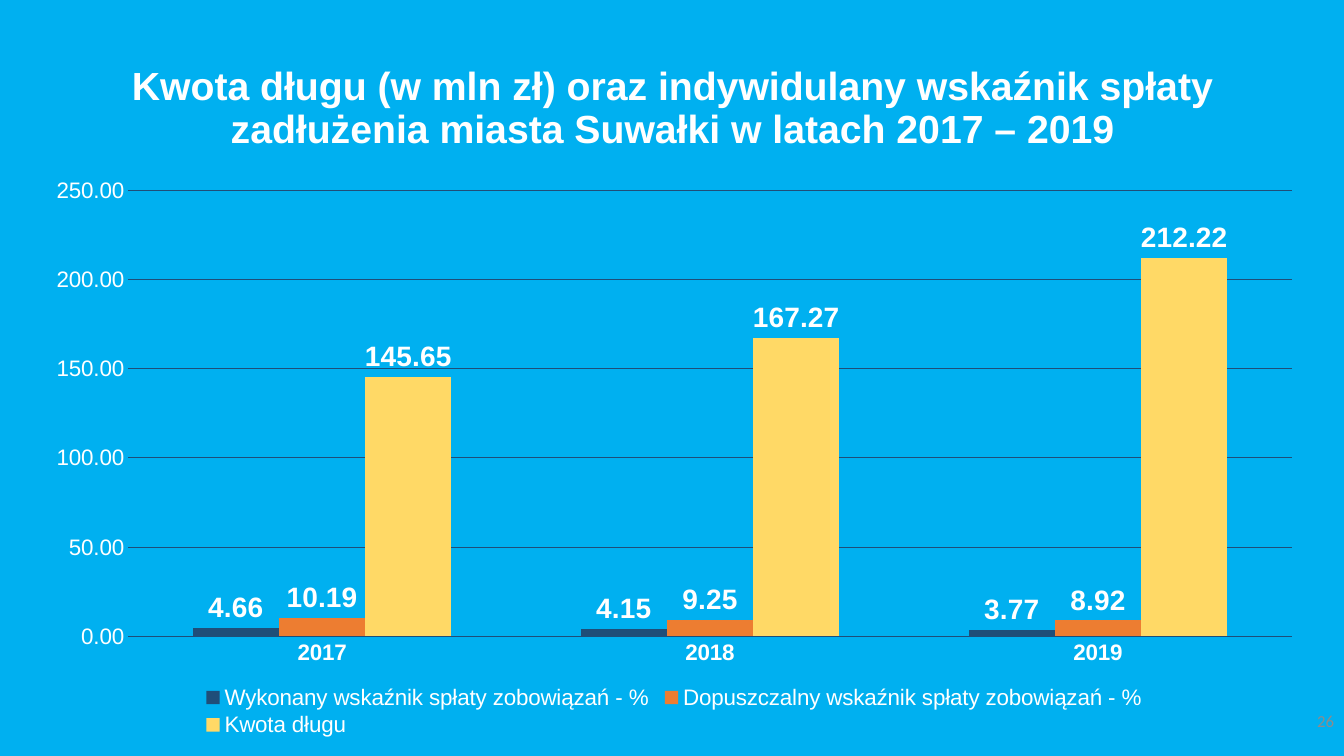
from lxml import etree
from pptx import Presentation
from pptx.chart.data import CategoryChartData
from pptx.dml.color import RGBColor
from pptx.enum import chart as ch, text
from pptx.oxml.ns import qn
from pptx.util import Inches, Pt

COLORS = {"sky": "00B0F0", "white": "FFFFFF", "navy": "1F4E79",
          "orange": "ED7D31", "yellow": "FFD966", "grey": "8C8C8C"}
YEARS = ["2017", "2018", "2019"]
SERIES = [
    ("Wykonany wskaźnik spłaty zobowiązań - %", [4.66, 4.15, 3.77], "navy"),
    ("Dopuszczalny wskaźnik spłaty zobowiązań - %", [10.19, 9.25, 8.92], "orange"),
    ("Kwota długu", [145.65, 167.27, 212.22], "yellow"),
]


def style_font(font, size, color="white", bold=False, name="Arial"):
    font.name, font.size, font.bold = name, Pt(size), bold
    font.color.rgb = RGBColor.from_string(COLORS[color])


def set_layout(parent, before, inner, **fractions):
    """Place a chart part by fractions of the chart, ahead of the element `before`."""
    for old in parent.findall(qn("c:layout")):
        parent.remove(old)
    layout = etree.Element(qn("c:layout"))
    manual = etree.SubElement(layout, qn("c:manualLayout"))
    if inner:
        etree.SubElement(manual, qn("c:layoutTarget")).set("val", "inner")
    for tag in ("xMode", "yMode"):
        etree.SubElement(manual, qn(f"c:{tag}")).set("val", "edge")
    for tag, value in fractions.items():
        etree.SubElement(manual, qn(f"c:{tag}")).set("val", str(value))
    parent.find(qn(before)).addprevious(layout)


prs = Presentation()
prs.slide_width, prs.slide_height = Inches(13.33), Inches(7.5)
s = prs.slides.add_slide(prs.slide_layouts[5])
s.background.fill.solid()
s.background.fill.fore_color.rgb = RGBColor.from_string(COLORS["sky"])

# Title
title = s.shapes.title
title.left, title.top = Inches(0.92), Inches(0.36)
title.width, title.height = Inches(11.5), Inches(1.45)
tf = title.text_frame
tf.word_wrap = True
tf.auto_size = text.MSO_AUTO_SIZE.NONE
tf.vertical_anchor = text.MSO_ANCHOR.MIDDLE
p = tf.paragraphs[0]
p.alignment, p.line_spacing = text.PP_ALIGN.CENTER, 0.9
r = p.add_run()
r.text = ("Kwota długu (w mln zł) oraz indywidulany wskaźnik spłaty "
          "zadłużenia miasta Suwałki w latach 2017 – 2019")
style_font(r.font, 28, bold=True)

# Debt chart
data = CategoryChartData(number_format="#,##0.00")
data.categories = YEARS
for name, values, _ in SERIES:
    data.add_series(name, values)
chart = s.shapes.add_chart(ch.XL_CHART_TYPE.COLUMN_CLUSTERED, Inches(0.3), Inches(1.66),
                           Inches(12.77), Inches(5.74), data).chart
chart.has_title = False
style_font(chart.font, 16)

plot = chart.plots[0]
plot.gap_width, plot.overlap, plot.vary_by_categories = 150, 0, False
for series, (_, _, color) in zip(plot.series, SERIES):
    series.format.fill.solid()
    series.format.fill.fore_color.rgb = RGBColor.from_string(COLORS[color])
    labels = series.data_labels
    labels.show_value = True
    labels.position = ch.XL_LABEL_POSITION.OUTSIDE_END
    style_font(labels.font, 20, bold=True)

for axis, bold in ((chart.category_axis, True), (chart.value_axis, False)):
    axis.major_tick_mark = axis.minor_tick_mark = ch.XL_TICK_MARK.NONE
    axis.format.line.fill.background()
    style_font(axis.tick_labels.font, 16, bold=bold)
axis = chart.value_axis
axis.minimum_scale, axis.maximum_scale, axis.major_unit = 0, 250, 50
axis.tick_labels.number_format = "#,##0.00"
axis.tick_labels.number_format_is_linked = False
axis.has_major_gridlines = True
grid = axis.major_gridlines.format.line
grid.width = Pt(0.75)
grid.color.rgb = RGBColor.from_string(COLORS["navy"])

chart.has_legend = True
legend = chart.legend
legend.position = ch.XL_LEGEND_POSITION.BOTTOM
legend.include_in_layout = False
style_font(legend.font, 16)
plot_area = chart.element.find(".//" + qn("c:plotArea"))
set_layout(plot_area, "c:barChart", True, x=0.076, y=0.04, w=0.904, h=0.771)
set_layout(chart.element.find(".//" + qn("c:legend")), "c:overlay", False,
           x=0.13, y=0.89, w=0.74, h=0.1)

# Page number
page = s.shapes.add_textbox(Inches(9.42), Inches(6.95), Inches(3.91), Inches(0.4))
tf = page.text_frame
tf.word_wrap = True
tf.vertical_anchor = text.MSO_ANCHOR.MIDDLE
p = tf.paragraphs[0]
p.alignment = text.PP_ALIGN.RIGHT
r = p.add_run()
r.text = "26"
style_font(r.font, 12, "grey", name="Calibri")

prs.save("out.pptx")
